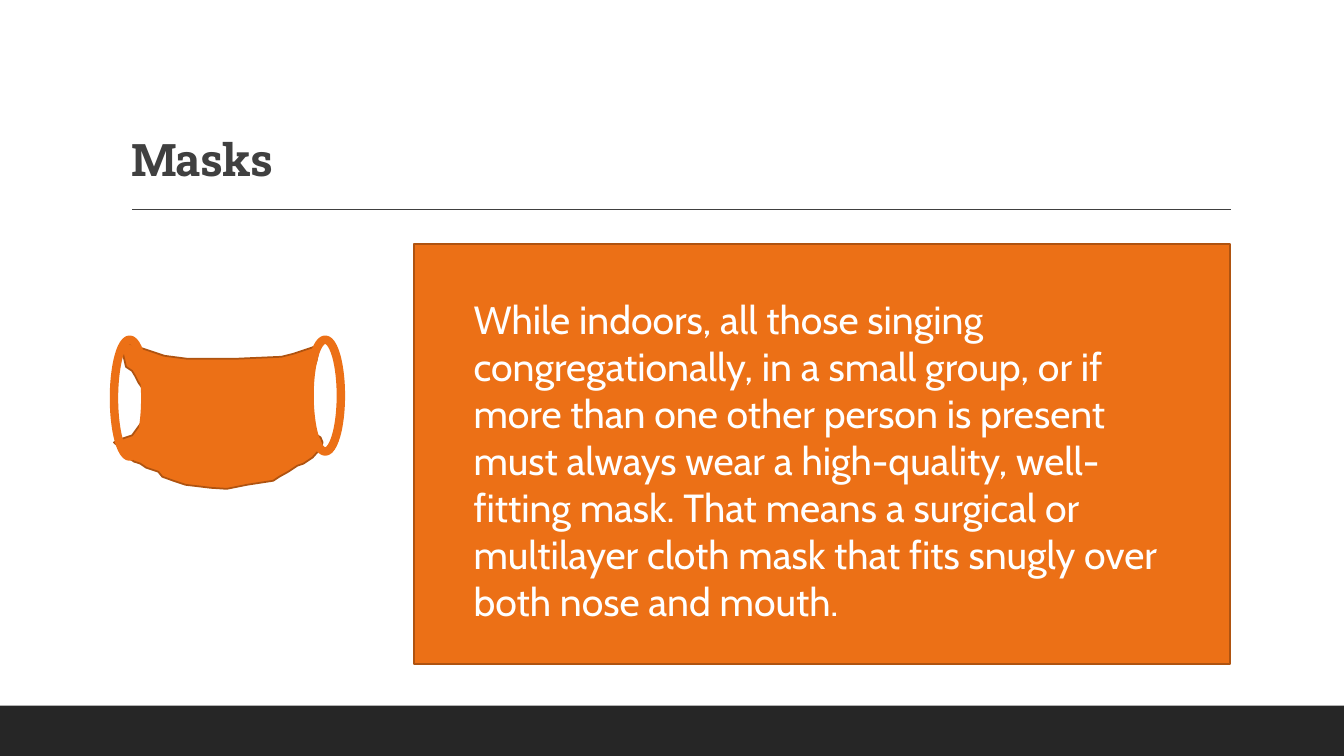
"""Build the slide on wearing masks while singing."""
import pptx
import pptx.util
import pptx.dml.color
import pptx.enum.shapes
import pptx.enum.text
import lxml.etree

Pt = pptx.util.Pt
RGB = pptx.dml.color.RGBColor
KIND = pptx.enum.shapes.MSO_SHAPE
ORANGE = RGB(0xEC, 0x70, 0x16)
RUST = RGB(0xAF, 0x53, 0x10)
GREY = RGB(0x40, 0x40, 0x40)
BLACK = RGB(0x26, 0x26, 0x26)
WHITE = RGB(0xFF, 0xFF, 0xFF)

TITLE = "Masks"
BODY = (
    "While indoors, all those singing congregationally, in a small group, "
    "or if more than one other person is present must always wear a "
    "high-quality, well-fitting mask. That means a surgical or multilayer "
    "cloth mask that fits snugly over both nose and mouth."
)
COLS = ROWS = 100
BAND = (0, 93.33, 100, 6.67)
HEAD = (9, 4.13, 82.5, 21.2)
RULE = (9.83, 27.73, 91.6, 27.73)
PANEL = (30.83, 32.27, 60.7, 55.6)
TEXT = (34.5, 38.4, 54.75, 45.33)
LOOPS = [(8.48, 44.93, 2.33, 15.47), (23.03, 44.93, 2.33, 14.8)]
MASK = (8.48, 44.93)
UNIT = pptx.util.Inches(0.01)
EDGE = [
    (10, 1), (14, 3), (20, 6), (32, 10), (44, 14), (50, 16), (73, 19),
    (120, 19), (166, 17), (178, 14), (196, 8), (207, 4), (203, 11),
    (201, 21), (199, 27), (197, 34), (196, 40), (194, 50), (193, 70),
    (194, 83), (199, 93), (205, 97), (207, 102), (205, 108), (197, 117),
    (188, 123), (182, 125), (173, 131), (164, 136), (158, 140), (145, 142),
    (132, 144), (112, 148), (96, 147), (71, 144), (59, 140), (48, 136),
    (44, 131), (32, 127), (26, 123), (20, 121), (14, 117), (7, 108),
    (0, 102), (6, 99), (18, 95), (26, 84), (30, 78), (29, 63), (28, 48),
    (24, 42), (21, 36), (18, 31), (12, 27), (9, 14),
]

deck = pptx.Presentation()
deck.slide_width = pptx.util.Inches(13.33)
deck.slide_height = pptx.util.Inches(7.5)
slide = deck.slides.add_slide(deck.slide_layouts[5])
shapes = slide.shapes


def place(cells):
    """Turn grid cells into slide lengths."""
    steps = (deck.slide_width / COLS, deck.slide_height / ROWS) * 2
    return [round(cell * step) for cell, step in zip(cells, steps)]


def paint(shape, fill=None, line=None, width=1.25):
    """Set the fill and outline of a shape."""
    shape.shadow.inherit = False
    if fill is None:
        shape.fill.background()
    else:
        shape.fill.solid()
        shape.fill.fore_color.rgb = fill
    if line is None:
        shape.line.fill.background()
    else:
        shape.line.color.rgb = line
        shape.line.width = Pt(width)


def write(frame, text, face, size, color, bold=False):
    """Put one left-aligned run into a text frame."""
    frame.word_wrap = True
    par = frame.paragraphs[0]
    par.alignment = pptx.enum.text.PP_ALIGN.LEFT
    run = par.add_run()
    run.text = text
    run.font.name = face
    run.font.size = Pt(size)
    run.font.bold = bold
    run.font.color.rgb = color
    return par, run


paint(shapes.add_shape(KIND.RECTANGLE, *place(BAND)), BLACK)

rule = shapes.add_connector(pptx.enum.shapes.MSO_CONNECTOR.STRAIGHT, *place(RULE))
rule.line.color.rgb = GREY
rule.line.width = Pt(1)
lxml.etree.SubElement(rule._element.spPr, pptx.oxml.ns.qn("a:effectLst"))

title = shapes.title
title.left, title.top, title.width, title.height = place(HEAD)
frame = title.text_frame
frame.auto_size = pptx.enum.text.MSO_AUTO_SIZE.NONE
frame.vertical_anchor = pptx.enum.text.MSO_ANCHOR.BOTTOM
par, run = write(frame, TITLE, "Roboto Slab", 32, GREY, True)
par.line_spacing = 0.9
run.font._element.set("spc", "-50")

paint(shapes.add_shape(KIND.RECTANGLE, *place(PANEL)), ORANGE, RUST)
box = shapes.add_textbox(*place(TEXT))
write(box.text_frame, BODY, "Cabin", 28, WHITE)

pen = shapes.build_freeform(*EDGE[0], scale=UNIT)
pen.add_line_segments(EDGE[1:], close=True)
paint(pen.convert_to_shape(*place(MASK)), ORANGE, RUST)
for loop in LOOPS:
    paint(shapes.add_shape(KIND.OVAL, *place(loop)), line=ORANGE, width=6)

deck.save("out.pptx")
